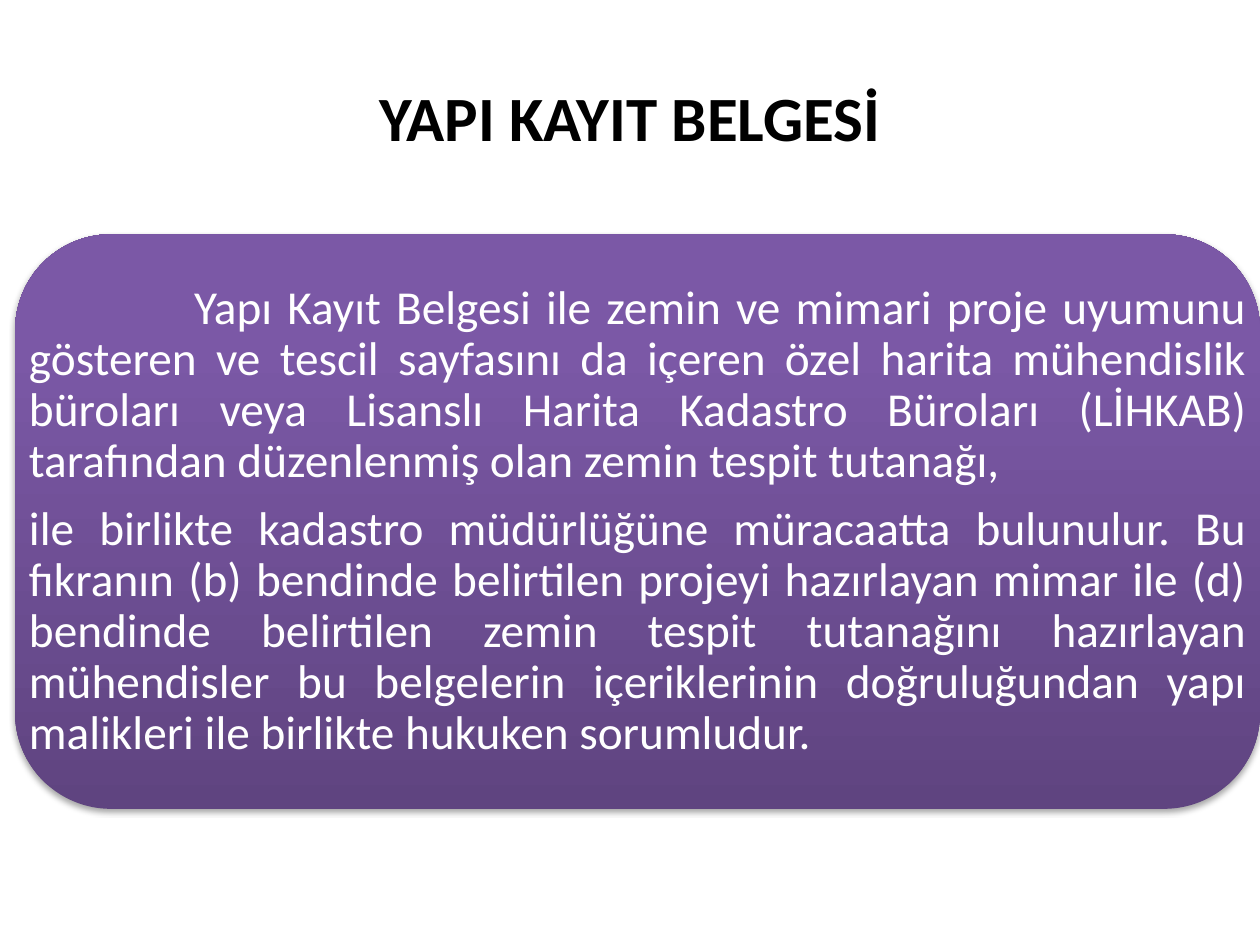
import copy

import pptx
import pptx.util
import pptx.dml.color
import pptx.enum.shapes
import pptx.enum.text
import pptx.oxml

Inches, Pt = pptx.util.Inches, pptx.util.Pt
RGBColor = pptx.dml.color.RGBColor
ALIGN = pptx.enum.text.PP_ALIGN

BLACK = RGBColor(0, 0, 0)
WHITE = RGBColor(255, 255, 255)
STOPS = [
    (0, RGBColor(0x5F, 0x44, 0x80)),
    (0.8, RGBColor(0x7B, 0x58, 0xA6)),
    (1, RGBColor(0x7C, 0x57, 0xA8)),
]
FONT = "Calibri"

TITLE = "YAPI KAYIT BELGESİ"
BODY = [
    "Yapı Kayıt Belgesi ile zemin ve mimari proje uyumunu gösteren ve tescil "
    "sayfasını da içeren özel harita mühendislik büroları veya Lisanslı Harita "
    "Kadastro Büroları (LİHKAB) tarafından düzenlenmiş olan zemin tespit tutanağı,",
    "ile birlikte kadastro müdürlüğüne müracaatta bulunulur. Bu fıkranın (b) "
    "bendinde belirtilen projeyi hazırlayan mimar ile (d) bendinde belirtilen "
    "zemin tespit tutanağını hazırlayan mühendisler bu belgelerin içeriklerinin "
    "doğruluğundan yapı malikleri ile birlikte hukuken sorumludur.",
]
SHADOW = (
    '<a:effectLst xmlns:a="http://schemas.openxmlformats.org/drawingml/2006/main">'
    '<a:outerShdw blurRad="39400" dist="22900" dir="5400000" rotWithShape="0">'
    '<a:srgbClr val="000000"><a:alpha val="35000"/></a:srgbClr>'
    "</a:outerShdw></a:effectLst>"
)


def add_text(slide, box, lines, size, color, align, bold=False):
    """Add a wrapped, vertically centred text box and return its frame."""
    frame = slide.shapes.add_textbox(*box).text_frame
    frame.word_wrap = True
    frame.vertical_anchor = pptx.enum.text.MSO_ANCHOR.MIDDLE
    frame.text = "\n".join(lines)
    for para in frame.paragraphs:
        para.alignment = align
        for run in para.runs:
            font = run.font
            font.name, font.size, font.bold = FONT, Pt(size), bold
            font.color.rgb = color
    return frame


def add_panel(slide, box):
    """Add the rounded panel with its gradient, shadow and text."""
    panel = slide.shapes.add_shape(
        pptx.enum.shapes.MSO_SHAPE.ROUNDED_RECTANGLE, *box)
    panel.line.fill.background()

    # Gradient from the dark bottom edge to the light top edge
    fill = panel.fill
    fill.gradient()
    fill.gradient_angle = 90
    stops = panel.element.spPr.find(".//" + pptx.oxml.ns.qn("a:gsLst"))
    stops.append(copy.deepcopy(stops[-1]))
    for stop, (place, color) in zip(fill.gradient_stops, STOPS):
        stop.position = place
        stop.color.rgb = color

    # Soft shadow below
    panel.element.spPr.append(pptx.oxml.parse_xml(SHADOW))

    # Justified body, first line indented
    frame = add_text(slide, box, BODY, 27, WHITE, ALIGN.JUSTIFY)
    frame.margin_left = frame.margin_right = Inches(0.11)
    frame.margin_top = frame.margin_bottom = Inches(0.11)
    for para in frame.paragraphs:
        para.line_spacing = 0.9
        para.space_after = Pt(9.45)
    first = frame.paragraphs[0].runs[0].font
    props = frame.paragraphs[0]._p.get_or_add_pPr()
    props.set("marL", "0")
    props.set("indent", str(Inches(1.31)))


def main():
    deck = pptx.Presentation()
    deck.slide_width, deck.slide_height = Inches(10), Inches(7.5)
    slide = deck.slides.add_slide(deck.slide_layouts[6])

    panel = [Inches(n) for n in (0.12, 1.86, 9.88, 4.56)]
    add_panel(slide, panel)

    head = [Inches(n) for n in (0.5, 0.3, 9, 1.25)]
    add_text(slide, head, [TITLE], 36, BLACK, ALIGN.CENTER, bold=True)

    deck.save("out.pptx")


if __name__ == "__main__":
    main()
